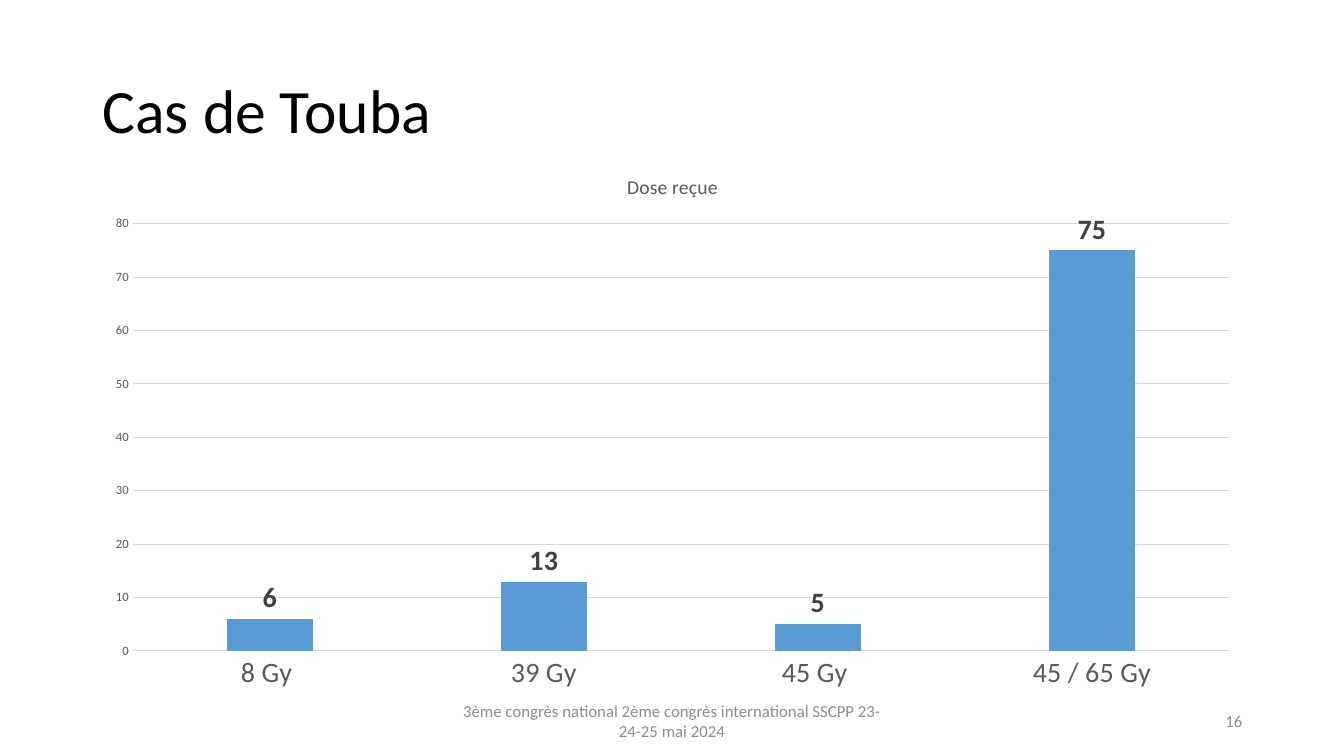
from pptx import Presentation
from pptx.chart.data import CategoryChartData
from pptx.dml.color import RGBColor
from pptx.enum.chart import XL_CHART_TYPE, XL_LABEL_POSITION, XL_TICK_MARK
from pptx.enum.text import MSO_ANCHOR, PP_ALIGN
from pptx.util import Inches, Pt

WIDTH, HEIGHT = 13.33, 7.5
MARGIN = 0.92
CONTENT_WIDTH = 11.5
FOOTER_TOP, FOOTER_HEIGHT = 6.95, 0.4


def style_font(font, size, color, bold=False):
    font.name = "Calibri"
    font.size = Pt(size)
    font.bold = bold
    font.color.rgb = RGBColor.from_string(color)


def add_text(page, text, left, top, width, height, size, color, align):
    box = page.shapes.add_textbox(Inches(left), Inches(top), Inches(width), Inches(height))
    frame = box.text_frame
    frame.word_wrap = True
    frame.vertical_anchor = MSO_ANCHOR.MIDDLE
    frame.text = text
    para = frame.paragraphs[0]
    para.alignment = align
    style_font(para.runs[0].font, size, color)
    return para


deck = Presentation()
deck.slide_width, deck.slide_height = Inches(WIDTH), Inches(HEIGHT)
page = deck.slides.add_slide(deck.slide_layouts[6])

# Title
heading = add_text(page, "Cas de Touba", MARGIN, 0.4, CONTENT_WIDTH, 1.45,
                   44, "000000", PP_ALIGN.LEFT)
heading.line_spacing = 0.9

# Dose chart
doses = CategoryChartData()
doses.categories = ["8 Gy ", "39 Gy", "45 Gy ", "45 / 65 Gy"]
doses.add_series("Series 1", [6, 13, 5, 75])
chart = page.shapes.add_chart(
    XL_CHART_TYPE.COLUMN_CLUSTERED, Inches(MARGIN), Inches(1.52),
    Inches(CONTENT_WIDTH), Inches(5.43), doses).chart
style_font(chart.font, 10, "000000")
chart.has_legend = False
chart.has_title = True
chart_title = chart.chart_title
chart_title.include_in_layout = False
chart_title.text_frame.text = "Dose reçue"
style_font(chart_title.text_frame.paragraphs[0].runs[0].font, 14, "595959")

# Columns and value labels
plot = chart.plots[0]
plot.vary_by_categories = False
plot.gap_width = 219
plot.overlap = -27
series = plot.series[0]
series.format.fill.solid()
series.format.fill.fore_color.rgb = RGBColor.from_string("5B9BD5")
labels = series.data_labels
labels.show_value = True
labels.position = XL_LABEL_POSITION.OUTSIDE_END
style_font(labels.font, 20, "404040", bold=True)

# Axes and gridlines
category_axis, value_axis = chart.category_axis, chart.value_axis
for axis, size in ((category_axis, 20), (value_axis, 9)):
    axis.major_tick_mark = axis.minor_tick_mark = XL_TICK_MARK.NONE
    style_font(axis.tick_labels.font, size, "595959")
value_axis.minimum_scale, value_axis.maximum_scale = 0, 80
value_axis.major_unit = 10
value_axis.has_major_gridlines = True
value_axis.format.line.fill.background()
for line in (category_axis.format.line, value_axis.major_gridlines.format.line):
    line.color.rgb = RGBColor.from_string("D9D9D9")
    line.width = Pt(0.75)

# Footer and page number
footers = [
    ("16", MARGIN + CONTENT_WIDTH - 3, 3, PP_ALIGN.RIGHT),
    ("3ème congrès national 2ème congrès international SSCPP 23-24-25 mai 2024",
     (WIDTH - 4.5) / 2, 4.5, PP_ALIGN.CENTER),
]
for text, left, width, align in footers:
    add_text(page, text, left, FOOTER_TOP, width, FOOTER_HEIGHT, 12, "8C8C8C", align)

deck.save("out.pptx")
